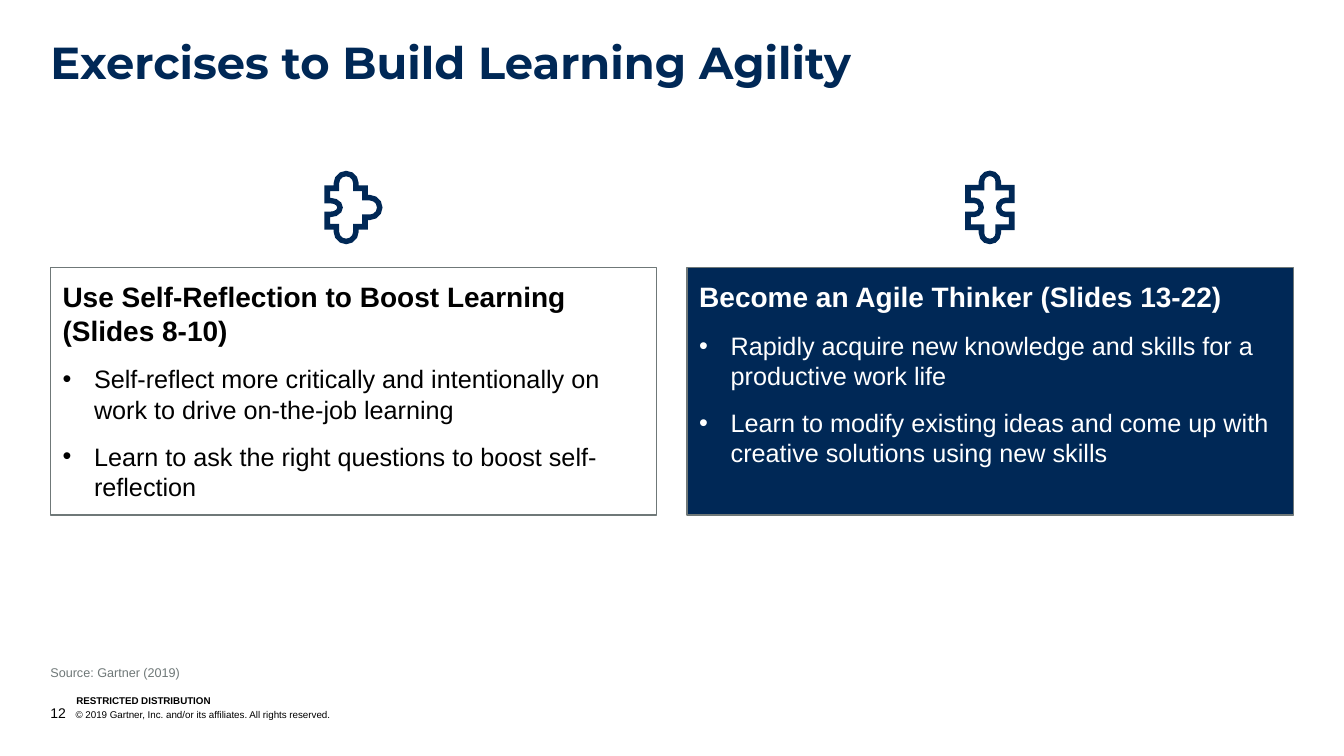
import math

import pptx
import pptx.dml.color
import pptx.enum.shapes
import pptx.enum.text
import pptx.oxml
import pptx.oxml.ns
import pptx.util

Pt = pptx.util.Pt
RGBColor = pptx.dml.color.RGBColor
ANCHOR = pptx.enum.text.MSO_ANCHOR
RECT = pptx.enum.shapes.MSO_SHAPE.RECTANGLE

NAVY = RGBColor(0x00, 0x28, 0x56)
GREY = RGBColor(0x6F, 0x78, 0x78)
BLACK = RGBColor(0, 0, 0)
WHITE = RGBColor(255, 255, 255)

LEFT = 36
CARD_TOP, CARD_W, CARD_H, CARD_GAP = 191.2, 433, 176.8, 21.8
STROKE = 4  # thickness of the puzzle outlines
FINE = 100  # freeform units in a point

CARDS = [
    ("Use Self-Reflection to Boost Learning (Slides 8-10)",
     ["Self-reflect more critically and intentionally on work to drive on-the-job learning",
      "Learn to ask the right questions to boost self-reflection"],
     None, BLACK),
    ("Become an Agile Thinker (Slides 13-22)",
     ["Rapidly acquire new knowledge and skills for a productive work life",
      "Learn to modify existing ideas and come up with creative solutions using new skills"],
     NAVY, WHITE),
]


def arc(cx, cy, rx, ry, start, sweep, steps=6):
    angles = [math.radians(start + sweep * i / steps) for i in range(steps + 1)]
    return [(cx + rx * math.cos(a), cy + ry * math.sin(a)) for a in angles]


def puzzle_contour(box, knob, notch, right_knob, d):
    """Clockwise outline of a puzzle piece, moved inwards by d, in fine units."""
    x, y, w, h = box
    rise, radius = knob
    depth, rx, ry = notch
    l, t, r, b = x + d, y + d, x + w - d, y + h - d
    cx, cy = x + w / 2, y + h / 2
    k, nx, ny = radius - d, rx + d, ry + d
    if right_knob:
        side, half = arc(x + w + rise, cy, k, k, -90, 180), k
    else:
        side, half = arc(x + w - depth, cy, nx, ny, -90, -180), ny
    points = [
        (l, t), (cx - k, t), *arc(cx, y - rise, k, k, 180, 180), (cx + k, t),
        (r, t), (r, cy - half), *side, (r, cy + half),
        (r, b), (cx + k, b), *arc(cx, y + h + rise, k, k, 0, 180), (cx - k, b),
        (l, b), (l, cy + ny), *arc(x + depth, cy, nx, ny, 90, -180), (l, cy - ny),
    ]
    return [(px * FINE, py * FINE) for px, py in points]


def set_indent(p, size, *elements):
    """Hanging indent, with bullet or tab elements in the paragraph properties."""
    pPr = p._p.get_or_add_pPr()
    pPr.set("marL", str(Pt(size)))
    pPr.set("indent", str(-Pt(size)))
    for tag, attrs, inner in elements:
        ns = pptx.oxml.ns.nsdecls("a")
        pPr.append(pptx.oxml.parse_xml(f"<a:{tag} {ns} {attrs}>{inner}</a:{tag}>"))


class Deck:
    def __init__(self):
        self.prs = pptx.Presentation()
        self.prs.slide_width, self.prs.slide_height = Pt(960), Pt(540)
        self.s = self.prs.slides.add_slide(self.prs.slide_layouts[6])
        self.font = "Arial"

    def frame(self, sp, insets=(0, 0, 0, 0), anchor=ANCHOR.TOP):
        tf = sp.text_frame
        l, t, r, b = map(Pt, insets)
        style = {"word_wrap": True, "vertical_anchor": anchor, "margin_left": l,
                 "margin_top": t, "margin_right": r, "margin_bottom": b}
        for name, value in style.items():
            setattr(tf, name, value)
        return tf

    def run(self, p, text, size, color, bold=False, font=None):
        r = p.add_run()
        r.text = text
        style = {"name": font or self.font, "size": Pt(size), "bold": bold}
        for name, value in style.items():
            setattr(r.font, name, value)
        r.font.color.rgb = color

    def text(self, box, text, size, color, bold=False, font=None, **frame):
        sp = self.s.shapes.add_textbox(*map(Pt, box))
        p = self.frame(sp, **frame).paragraphs[0]
        self.run(p, text, size, color, bold, font)
        return p

    def card(self, box, heading, bullets, fill, color):
        sp = self.s.shapes.add_shape(RECT, *map(Pt, box))
        sp.shadow.inherit = False
        if fill is None:
            sp.fill.background()
        else:
            sp.fill.solid()
            sp.fill.fore_color.rgb = fill
        sp.line.color.rgb = GREY
        sp.line.width = Pt(1)
        tf = self.frame(sp, insets=(8.64,) * 4)
        for i, text in enumerate([heading, *bullets]):
            p = tf.add_paragraph() if i else tf.paragraphs[0]
            if i:
                set_indent(p, 22.5,
                           ("buClr", "", f'<a:srgbClr val="{color}"/>'),
                           ("buFont", f'typeface="{self.font}"', ""),
                           ("buChar", 'char="•"', ""))
            p.alignment = pptx.enum.text.PP_ALIGN.LEFT
            p.space_after = Pt(12)
            self.run(p, text, 18 if i else 20, color, bold=not i)

    def puzzle(self, box, knob, notch, right_knob):
        outer, inner = [puzzle_contour(box, knob, notch, right_knob, d) for d in (0, STROKE)]
        fb = self.s.shapes.build_freeform(*outer[0], scale=Pt(1) / FINE)
        fb.add_line_segments(outer[1:], close=True)
        fb.move_to(*inner[0])
        fb.add_line_segments(inner[1:], close=True)
        sp = fb.convert_to_shape()
        sp.shadow.inherit = False
        sp.fill.solid()
        sp.fill.fore_color.rgb = NAVY
        sp.line.fill.background()


def main():
    deck = Deck()
    p = deck.text((LEFT, 503.3, 575, 12.2), "12", 10, BLACK, anchor=ANCHOR.BOTTOM)
    set_indent(p, 18, ("tabLst", "", f'<a:tab pos="{Pt(18)}" algn="l"/>'))
    deck.run(p, "\t© 2019 Gartner, Inc. and/or its affiliates. All rights reserved.", 7, BLACK)
    deck.text((54.5, 496, 182, 8.6), "RESTRICTED DISTRIBUTION", 7, BLACK, bold=True,
              anchor=ANCHOR.BOTTOM)

    title = deck.text((LEFT, 28.8, 888, 34.6), "Exercises to Build Learning Agility",
                      32, NAVY, bold=True, font="Montserrat")
    title.line_spacing = 0.9
    title.space_after = Pt(12)

    for i, card in enumerate(CARDS):
        deck.card((LEFT + i * (CARD_W + CARD_GAP), CARD_TOP, CARD_W, CARD_H), *card)

    deck.puzzle((231.8, 132.5, 31, 31.5), knob=(1.5, 9), notch=(4, 5.2, 3), right_knob=True)
    deck.puzzle((689.5, 132, 35.2, 32.3), knob=(2.2, 8), notch=(6.4, 3, 3), right_knob=False)

    deck.text((LEFT, 471.6, 731, 18), "Source: Gartner (2019)", 9, GREY,
              insets=(0, 3.6, 7.2, 3.6))
    deck.prs.save("out.pptx")


if __name__ == "__main__":
    main()
